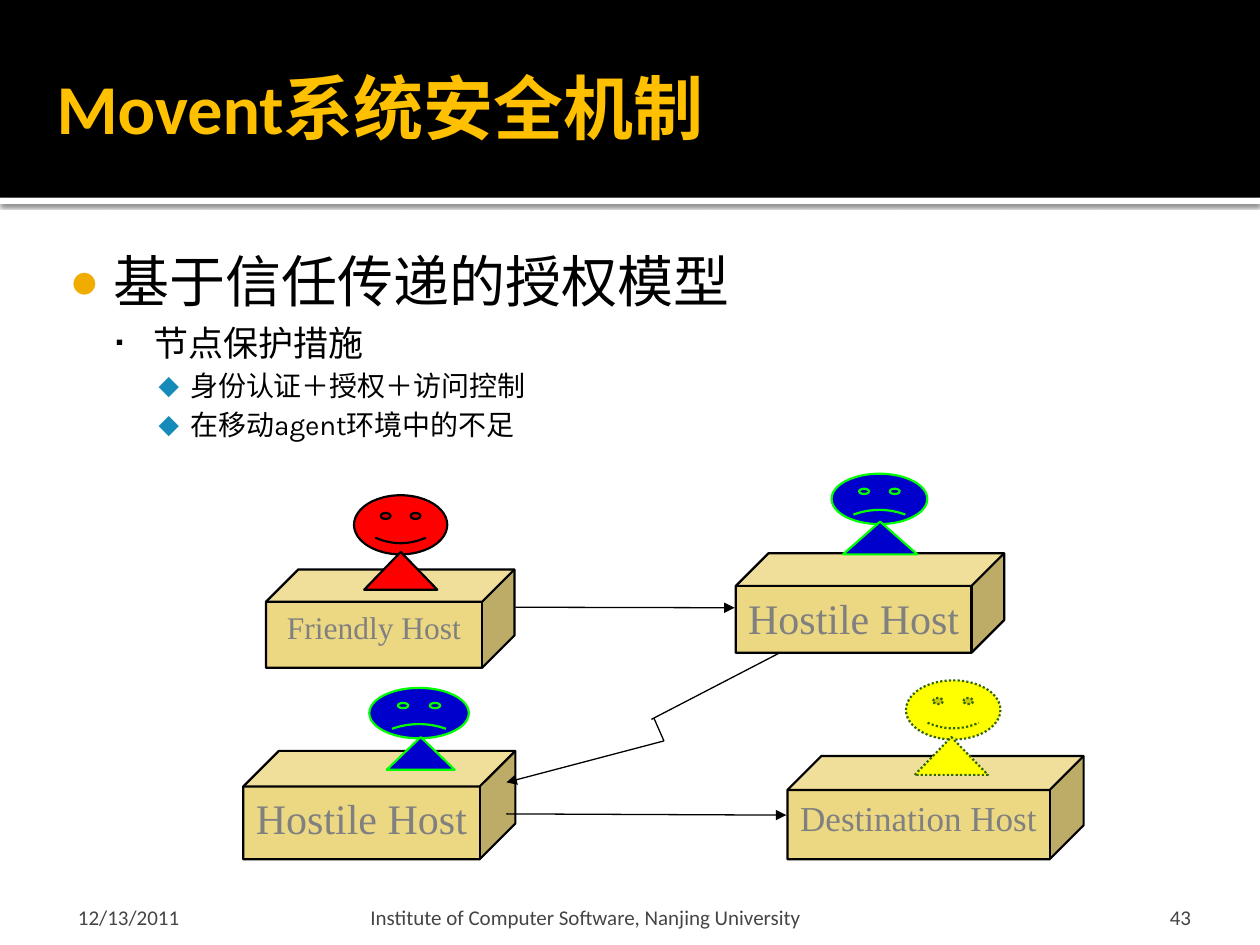
"""Build the slide on the trust-based authorisation model for mobile agents."""
from dataclasses import dataclass
from typing import NamedTuple, Optional

from lxml.etree import SubElement
from pptx import Presentation
from pptx.dml.color import RGBColor
from pptx.enum.dml import MSO_LINE
from pptx.enum.shapes import MSO_CONNECTOR, MSO_SHAPE
from pptx.enum.text import MSO_ANCHOR, PP_ALIGN
from pptx.oxml.ns import qn
from pptx.util import Pt


@dataclass(frozen=True)
class Theme:
    black: str = "000000"
    white: str = "FFFFFF"
    title: str = "FFC000"
    footer: str = "454545"
    host: str = "ECD882"
    label: str = "808080"
    bullet: str = "F0AD00"
    diamond: str = "168BBA"
    heading: str = "Calibri"
    body: str = "Karla"
    serif: str = "Times New Roman"
    title_size: float = 40
    level_sizes: tuple = (32, 20, 16)
    footer_size: float = 12
    outline: float = 1.25
    arrow: float = 0.75


class Box(NamedTuple):
    x: float
    y: float
    w: float
    h: float


class Mood(NamedTuple):
    fill: str
    line: str
    smile: float
    dash: Optional[MSO_LINE] = None


class Host(NamedTuple):
    label: str
    size: float
    cube: Box
    head: Box
    torso: Box
    mood: Mood


class Line(NamedTuple):
    x1: float
    y1: float
    x2: float
    y2: float
    arrow: bool = True


class Level(NamedTuple):
    margin: float
    indent: float
    before: float
    char: str
    color: str
    percent: int


class Footer(NamedTuple):
    text: str
    box: Box
    insets: tuple
    align: PP_ALIGN = PP_ALIGN.LEFT


T = Theme()
HOSTILE = Mood("0000CC", "00FF00", -0.047)
FRIENDLY = Mood("FF0000", T.black, 0.047)
DESTINATION = Mood("FFFF00", "336600", 0.047, MSO_LINE.ROUND_DOT)

HOSTS = (
    Host("Hostile Host", 24, Box(139, 429.1, 155.5, 61.9),
         Box(211, 393.1, 56.9, 28.8), Box(221, 421.2, 38.9, 18.7), HOSTILE),
    Host("Hostile Host", 24, Box(420.5, 316.1, 153.4, 56.9),
         Box(475.2, 270.7, 54.7, 28.8), Box(481.7, 298.1, 42.5, 18.7), HOSTILE),
    Host("Friendly Host", 18, Box(152, 325.4, 142, 56.2),
         Box(202.3, 283, 53.3, 33.8), Box(208.1, 315.4, 41.8, 21.6), FRIENDLY),
    Host("Destination Host", 20, Box(450, 432, 169.2, 59),
         Box(517.7, 388.8, 54, 33.8), Box(522.7, 421.2, 41.8, 21.6), DESTINATION),
)
LINES = (
    Line(294.5, 347, 419.8, 347.3),
    Line(289.4, 465.1, 449.3, 465.8),
    Line(445.7, 373, 372.2, 411.1, False),
    Line(373.7, 410.4, 379.4, 423.4, False),
    Line(379.4, 423.4, 289.4, 447.1),
)
LEVELS = (
    Level(34.6, -25.2, 0, "•", T.bullet, 110),
    Level(57.6, -21.6, 4, "▪", T.black, 60),
    Level(78.5, -18, 3.2, "◆", T.diamond, 95),
)
BODY = (
    (0, "基于信任传递的授权模型"),
    (1, "节点保护措施"),
    (2, "身份认证＋授权＋访问控制"),
    (2, "在移动agent环境中的不足"),
)
FOOTERS = (
    Footer("12/13/2011", Box(36, 509.8, 167.8, 21.6), (8.6, 3.6, 3.6, 0)),
    Footer("Institute of Computer Software, Nanjing University",
           Box(208.1, 509.8, 433.4, 21.6), (3.6, 3.6, 3.6, 0)),
    Footer("43", Box(645.8, 509.8, 57.6, 21.6), (7.2, 3.6, 7.2, 0), PP_ALIGN.CENTER),
)


def add_text(p, text: str, *, size: float, font: str, color: str,
             bold: bool = False, align: PP_ALIGN = PP_ALIGN.LEFT) -> None:
    p.alignment = align
    r = p.add_run()
    r.text = text
    r.font.size, r.font.name, r.font.bold = Pt(size), font, bold
    r.font.color.rgb = RGBColor.from_string(color)


def add_frame(shapes, box: Box, insets: tuple, anchor: MSO_ANCHOR):
    tf = shapes.add_textbox(*map(Pt, box)).text_frame
    tf.word_wrap, tf.vertical_anchor = True, anchor
    (tf.margin_left, tf.margin_top,
     tf.margin_right, tf.margin_bottom) = map(Pt, insets)
    return tf


def add_shape(shapes, kind: MSO_SHAPE, box: Box, fill: str, line: Optional[str] = None,
              dash: Optional[MSO_LINE] = None, adj: Optional[float] = None):
    sp = shapes.add_shape(kind, *map(Pt, box))
    sp.shadow.inherit = False
    sp.fill.solid()
    sp.fill.fore_color.rgb = RGBColor.from_string(fill)
    if line is None:
        sp.line.fill.background()
    else:
        sp.line.color.rgb = RGBColor.from_string(line)
        sp.line.width = Pt(T.outline)
        if dash is not None:
            sp.line.dash_style = dash
    if adj is not None:
        sp.adjustments[0] = adj
    return sp


def add_header(shapes) -> None:
    band = add_shape(shapes, MSO_SHAPE.RECTANGLE, Box(0, 113, 720, 3.6), T.white)
    effects = band.element.spPr.find(qn("a:effectLst"))
    shadow = SubElement(effects, qn("a:outerShdw"), blurRad=str(Pt(2.5)),
                        dist=str(Pt(0.8)), dir="5400000", rotWithShape="0")
    color = SubElement(shadow, qn("a:srgbClr"), val=T.black)
    SubElement(color, qn("a:alpha"), val="60000")
    add_shape(shapes, MSO_SHAPE.RECTANGLE, Box(0, 0, 720, 113), T.black)
    tf = add_frame(shapes, Box(25.2, 4.3, 680.4, 113), (7.2, 3.6, 3.6, 3.6), MSO_ANCHOR.MIDDLE)
    add_text(tf.paragraphs[0], "Movent系统安全机制", size=T.title_size,
             font=T.heading, color=T.title, bold=True)


def add_body(shapes) -> None:
    tf = add_frame(shapes, Box(25.9, 133.9, 646.6, 387.4), (4.3, 7.2, 7.2, 3.6), MSO_ANCHOR.TOP)
    for i, (depth, text) in enumerate(BODY):
        level = LEVELS[depth]
        p = tf.add_paragraph() if i else tf.paragraphs[0]
        add_text(p, text, size=T.level_sizes[depth], font=T.body, color=T.black)
        p.level, p.space_before = depth, Pt(level.before)
        pPr = p._p.get_or_add_pPr()
        pPr.set("marL", str(Pt(level.margin)))
        pPr.set("indent", str(Pt(level.indent)))
        SubElement(SubElement(pPr, qn("a:buClr")), qn("a:srgbClr"), val=level.color)
        SubElement(pPr, qn("a:buSzPct"), val=str(level.percent * 1000))
        SubElement(pPr, qn("a:buFont"), typeface=T.heading)
        SubElement(pPr, qn("a:buChar"), char=level.char)


def add_host(shapes, host: Host) -> None:
    tf = add_shape(shapes, MSO_SHAPE.CUBE, host.cube, T.host, T.black, adj=0.329).text_frame
    tf.word_wrap, tf.vertical_anchor = False, MSO_ANCHOR.TOP
    add_text(tf.paragraphs[0], host.label, size=host.size, font=T.serif,
             color=T.label, align=PP_ALIGN.CENTER)
    mood = host.mood
    agent = shapes.add_group_shape().shapes
    add_shape(agent, MSO_SHAPE.SMILEY_FACE, host.head, mood.fill, mood.line, mood.dash, mood.smile)
    add_shape(agent, MSO_SHAPE.ISOSCELES_TRIANGLE, host.torso, mood.fill, mood.line, mood.dash)


def add_line(shapes, line: Line) -> None:
    s = shapes.add_connector(MSO_CONNECTOR.STRAIGHT, *map(Pt, line[:4]))
    s.line.color.rgb = RGBColor.from_string(T.black)
    s.line.width = Pt(T.arrow)
    if line.arrow:
        SubElement(s.element.spPr.find(qn("a:ln")), qn("a:tailEnd"), type="triangle")
    SubElement(s.element.spPr, qn("a:effectLst"))


def main() -> None:
    prs = Presentation()
    prs.slide_width, prs.slide_height = Pt(720), Pt(540)
    shapes = prs.slides.add_slide(prs.slide_layouts[6]).shapes
    add_header(shapes)
    add_body(shapes)
    for host in HOSTS:
        add_host(shapes, host)
    for line in LINES:
        add_line(shapes, line)
    for footer in FOOTERS:
        tf = add_frame(shapes, footer.box, footer.insets, MSO_ANCHOR.BOTTOM)
        add_text(tf.paragraphs[0], footer.text, size=T.footer_size, font=T.heading,
                 color=T.footer, align=footer.align)
    prs.save("out.pptx")


if __name__ == "__main__":
    main()
